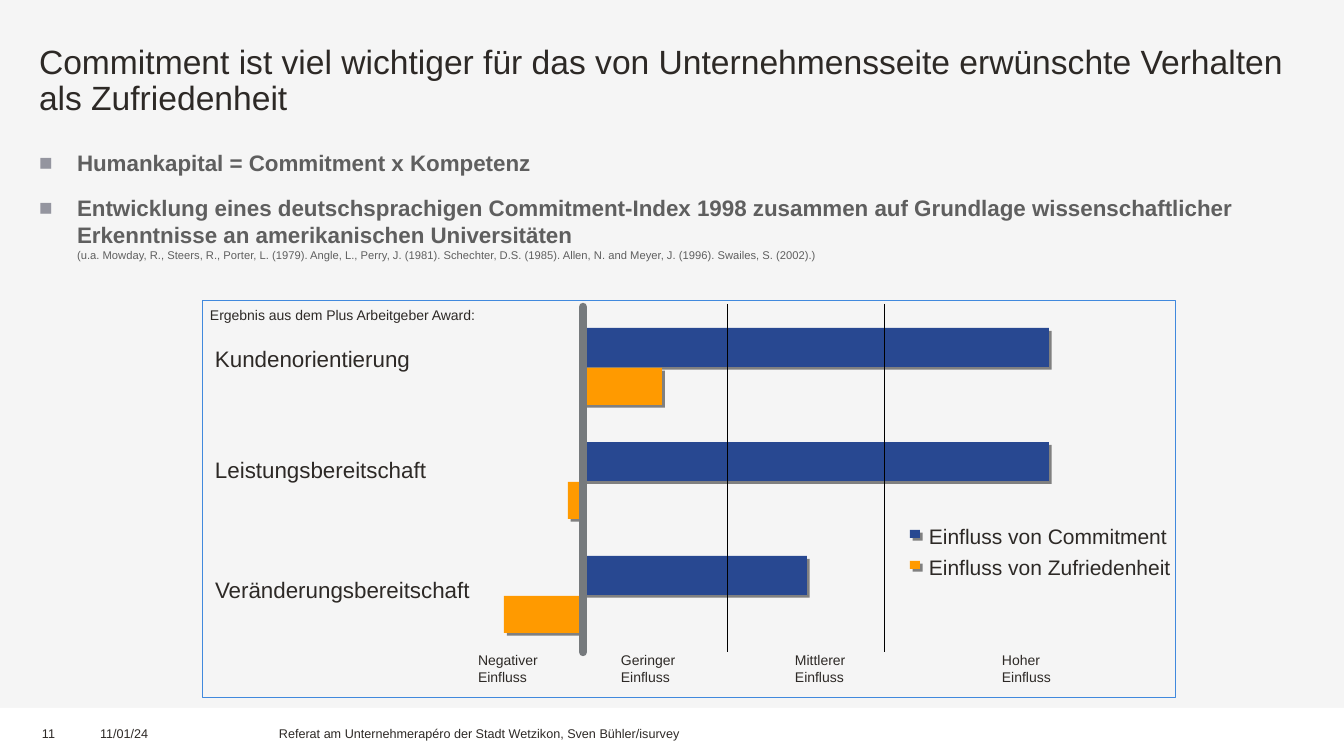
"""Build the slide on the influence of commitment and satisfaction."""
from dataclasses import dataclass

from lxml.etree import SubElement
from pptx import Presentation
from pptx.dml.color import RGBColor
from pptx.enum.shapes import MSO_CONNECTOR, MSO_SHAPE
from pptx.enum.text import MSO_ANCHOR, PP_ALIGN
from pptx.oxml.ns import qn
from pptx.util import Emu, Pt

TITLE = ("Commitment ist viel wichtiger für das von Unternehmensseite erwünschte "
         "Verhalten als Zufriedenheit")
BULLETS = [
    "Humankapital = Commitment x Kompetenz",
    "Entwicklung eines deutschsprachigen Commitment-Index 1998 zusammen auf Grundlage "
    "wissenschaftlicher Erkenntnisse an amerikanischen Universitäten",
]
CITATION = ("(u.a. Mowday, R., Steers, R., Porter, L. (1979). Angle, L., Perry, J. (1981). "
            "Schechter, D.S. (1985). Allen, N. and Meyer, J. (1996). Swailes, S. (2002).)")
CAPTION = "Ergebnis aus dem Plus Arbeitgeber Award:"
ROWS = [
    ("Kundenorientierung", 345, 202, 466, 79),
    ("Leistungsbereitschaft", 456, 219, 466, -15),
    ("Veränderungsbereitschaft", 576, 261, 224, -79),
]
LEVELS = [("Negativer", 478, 66), ("Geringer", 621, 60),
          ("Mittlerer", 795, 57), ("Hoher", 1002, 55)]
FOOTER = [
    ("11", 42, 49),
    ("11/01/24", 100, 116),
    ("Referat am Unternehmerapéro der Stadt Wetzikon, Sven Bühler/isurvey", 279, 783),
]
LEGEND = ["Einfluss von Commitment", "Einfluss von Zufriedenheit"]

WIDTH, HEIGHT = 1344, 756
AXIS_X, PLOT_TOP, PLOT_BOTTOM = 583, 304, 652
GRID_X = [727, 884]
BAR_TOP, BAR_STEP = 328, 114
LEGEND_TOP, LEGEND_STEP, LEGEND_WIDTH = 524, 31, 250
INDENT = 38


@dataclass(frozen=True)
class Theme:
    """Colours, font and type sizes."""
    font: str = "Arial"
    back: str = "F5F5F5"
    white: str = "FFFFFF"
    ink: str = "2D2926"
    body: str = "5F5F5F"
    bullet: str = "94959F"
    commitment: str = "284891"
    satisfaction: str = "FF9A00"
    frame: str = "4189DD"
    axis: str = "767A7D"
    grid: str = "000000"
    shadow: str = "808080"
    title_size: int = 24
    label_size: int = 16
    legend_size: int = 15
    break_size: int = 14
    small_size: int = 10
    footer_size: int = 9
    note_size: int = 8


T = Theme()


def px(n):
    """Turn px into EMU."""
    return Emu(round(n * 914400 / 100.8))


def box(x, y, w, h):
    """Return a place in EMU."""
    return px(x), px(y), px(w), px(h)


def rgb(color):
    """Return a colour object."""
    return RGBColor.from_string(color)


def add_run(p, text, size, color, bold):
    """Add one formatted run."""
    r = p.add_run()
    r.text = text
    r.font.name, r.font.size, r.font.bold = T.font, Pt(size), bold
    r.font.color.rgb = rgb(color)


def add_bullet(p):
    """Give a paragraph a square bullet and a hanging indent."""
    pPr = p._p.get_or_add_pPr()
    pPr.set("marL", str(px(INDENT)))
    pPr.set("indent", str(-px(INDENT)))
    SubElement(SubElement(pPr, qn("a:buClr")), qn("a:srgbClr"), val=T.bullet)
    SubElement(pPr, qn("a:buFont"), typeface=T.font)
    SubElement(pPr, qn("a:buChar"), char="■")


def write(tf, lines, size=T.small_size, color=T.ink, bold=False, wrap=False,
          anchor=MSO_ANCHOR.TOP, insets=(0, 0, 0, 0), spacing=None, before=0,
          bullet=False, note=None):
    """Fill a text frame with one paragraph per line."""
    tf.word_wrap, tf.vertical_anchor = wrap, anchor
    tf.margin_left, tf.margin_top, tf.margin_right, tf.margin_bottom = map(px, insets)
    for i, line in enumerate(lines):
        p = tf.add_paragraph() if i else tf.paragraphs[0]
        p.alignment = PP_ALIGN.LEFT
        if spacing:
            p.line_spacing = spacing
        if i and before:
            p.space_before = Pt(before)
        if bullet:
            add_bullet(p)
        add_run(p, line, size, color, bold)
    if note:
        p.add_line_break()
        SubElement(p._p[-1], qn("a:rPr"), sz=str(T.break_size * 100))
        add_run(p, note, T.note_size, color, False)


def add_text(s, place, lines, **fmt):
    """Add a text box."""
    write(s.shapes.add_textbox(*box(*place)).text_frame, lines, **fmt)


def add_rect(s, place, fill, line=None, shadow=False):
    """Add a rectangle."""
    sp = s.shapes.add_shape(MSO_SHAPE.RECTANGLE, *box(*place))
    sp.shadow.inherit = False
    sp.fill.solid()
    sp.fill.fore_color.rgb = rgb(fill)
    if line:
        sp.line.color.rgb = rgb(line)
        sp.line.width = Pt(0.75)
    else:
        sp.line.fill.background()
    if shadow:
        effects = sp._element.spPr.find(qn("a:effectLst"))
        outer = SubElement(effects, qn("a:outerShdw"), dist=str(Pt(2.8)),
                           dir="2700000", algn="ctr", rotWithShape="0")
        SubElement(outer, qn("a:srgbClr"), val=T.shadow)


def add_vertical(s, x, top, color, width, cap="flat"):
    """Add a vertical line down to the foot of the plot."""
    c = s.shapes.add_connector(MSO_CONNECTOR.STRAIGHT, px(x), px(top), px(x), px(PLOT_BOTTOM))
    c.line.color.rgb = rgb(color)
    c.line.width = Pt(width)
    c.line._get_or_add_ln().set("cap", cap)
    SubElement(c._element.spPr, qn("a:effectLst"))


def add_diagram(s):
    """Draw the framed bar diagram."""
    add_rect(s, (203, 300, 973, 398), T.back, line=T.frame)
    add_text(s, (210, 307, 290, 17), [CAPTION])
    colors = (T.commitment, T.satisfaction)
    for i, (label, y, w, *values) in enumerate(ROWS):
        add_text(s, (215, y, w, 27), [label], size=T.label_size)
        for j, (value, color, height) in enumerate(zip(values, colors, (39, 37))):
            place = (AXIS_X + min(value, 0), BAR_TOP + i * BAR_STEP + j * 40, abs(value), height)
            add_rect(s, place, color, shadow=True)
    for i, (label, color) in enumerate(zip(LEGEND, colors)):
        y = LEGEND_TOP + i * LEGEND_STEP
        add_rect(s, (910, y + 6, 10, 8), color, shadow=True)
        add_text(s, (929, y, LEGEND_WIDTH, 25), [label], size=T.legend_size)
    for x in GRID_X:
        add_vertical(s, x, PLOT_TOP, T.grid, 0.38)
    add_vertical(s, AXIS_X, PLOT_TOP + 3, T.axis, 6, cap="rnd")
    for label, x, w in LEVELS:
        add_text(s, (x, PLOT_BOTTOM, w, 34), [label, "Einfluss"])


def main():
    """Build and save the slide."""
    prs = Presentation()
    prs.slide_width, prs.slide_height = px(WIDTH), px(HEIGHT)
    s = prs.slides.add_slide(prs.slide_layouts[5])
    s.background.fill.solid()
    s.background.fill.fore_color.rgb = rgb(T.back)
    title = s.shapes.title
    title.left, title.top, title.width, title.height = box(39, 45, 1265, 74)
    write(title.text_frame, [TITLE], size=T.title_size, wrap=True, spacing=0.9)
    add_rect(s, (0, 708, WIDTH, 48), T.white)
    for text, x, w in FOOTER:
        add_text(s, (x, 708, w, 38), [text], size=T.footer_size, wrap=True,
                 anchor=MSO_ANCHOR.BOTTOM, insets=(0, 5, 10, 5))
    add_diagram(s)
    add_text(s, (39, 149, 1254, 138), BULLETS, size=T.label_size, color=T.body, bold=True,
             wrap=True, before=13, bullet=True, note=CITATION)
    prs.save("out.pptx")


if __name__ == "__main__":
    main()
